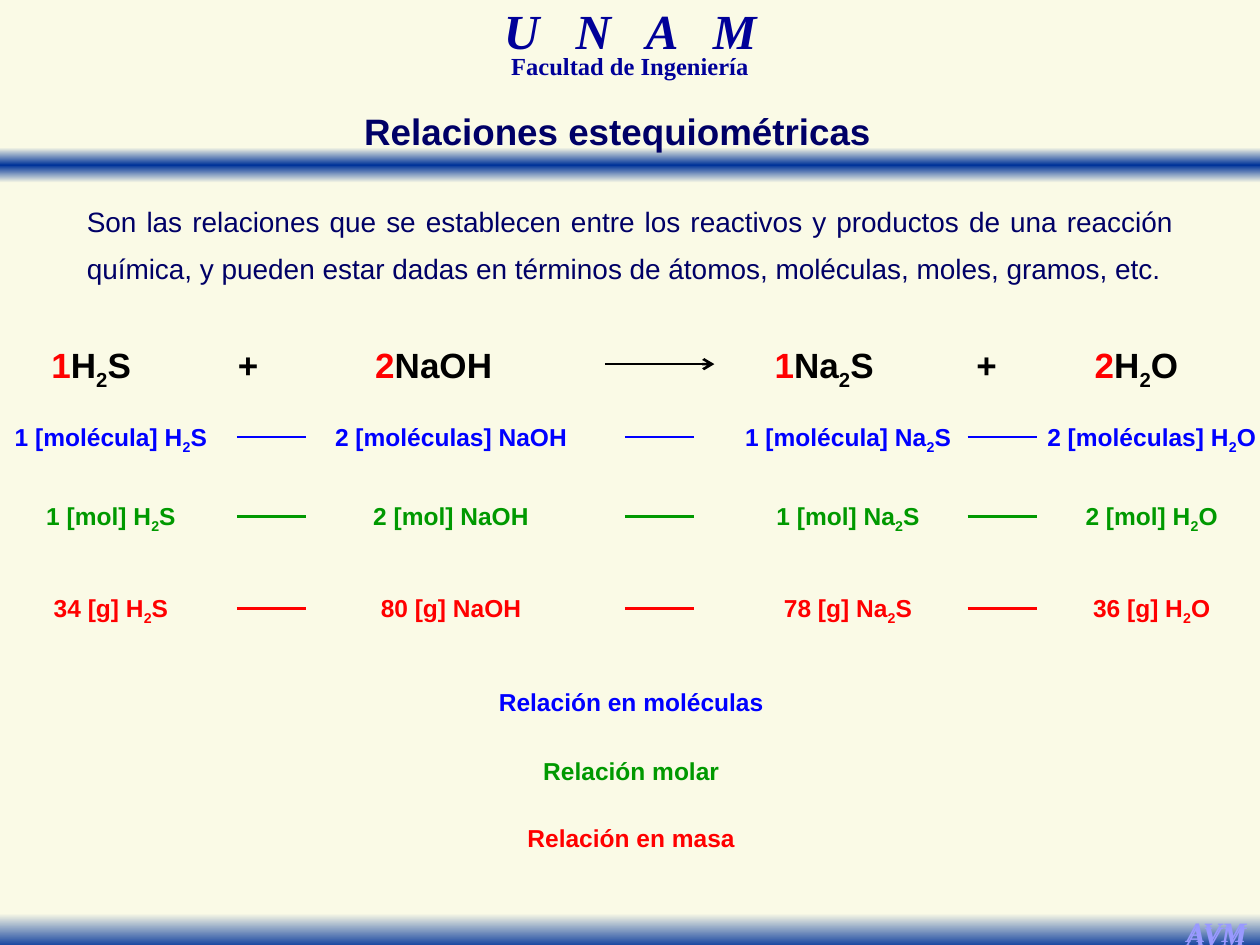
from dataclasses import dataclass

from lxml.etree import SubElement
from pptx import Presentation
from pptx.dml.color import RGBColor
from pptx.enum.shapes import MSO_CONNECTOR as Connector, MSO_SHAPE as Shape
from pptx.enum.text import MSO_ANCHOR as Anchor, MSO_AUTO_SIZE as AutoSize, PP_ALIGN as Align
from pptx.oxml.ns import qn
from pptx.util import Inches, Pt


@dataclass(frozen=True)
class Theme:
    """Colours, fonts and sizes of the slide."""
    cream: str = "FAFAE6"
    bar: str = "003399"
    header: str = "000099"
    navy: str = "000066"
    initials: str = "9999FF"
    black: str = "000000"
    blue: str = "0000FF"
    green: str = "009900"
    red: str = "FF0000"
    sans: str = "Arial"
    serif: str = "Times New Roman"
    banner_size: int = 28
    title_size: int = 21
    equation_size: int = 20
    body_size: int = 16
    label_size: int = 14
    line_width: float = 1.5


THEME = Theme()
ROW_HEIGHT = 0.34
LINK_LEFTS = (1.88, 4.96, 7.68)
LINK_LENGTH = 0.55
COLUMN_CENTERS = (0.88, 3.58, 6.73, 9.14)
TERMS = ("H_2S", "NaOH", "Na_2S", "H_2O")
ROWS = (
    (3.3, THEME.blue, ("1 [molécula]", "2 [moléculas]", "1 [molécula]", "2 [moléculas]"),
     (1.74, 2.05, 1.85, 1.87)),
    (3.93, THEME.green, ("1 [mol]", "2 [mol]", "1 [mol]", "2 [mol]"),
     (1.25, 1.44, 1.35, 1.27)),
    (4.66, THEME.red, ("34 [g]", "80 [g]", "78 [g]", "36 [g]"),
     (1.12, 1.32, 1.23, 1.15)),
)
LEGEND = (
    ("Relación en moléculas", THEME.blue, 5.4, 2.39),
    ("Relación molar", THEME.green, 5.95, 1.61),
    ("Relación en masa", THEME.red, 6.48, 1.86),
)
EQUATION = (
    ("1", "H_2S"), ("\t", "+"), ("\t2", "NaOH"),
    ("\t1", "Na_2S"), ("\t", "+"), ("\t2", "H_2O"),
)
EQUATION_TABS = (1.48, 2.57, 5.74, 7.34, 8.28)


def add_run(paragraph, text, size, color, name=THEME.sans, bold=True, italic=False):
    """Add one formatted run and return it."""
    run = paragraph.add_run()
    run.text = text
    run.font.size, run.font.name = Pt(size), name
    run.font.bold, run.font.italic = bold, italic
    run.font.color.rgb = RGBColor.from_string(color)
    return run


def add_formula(paragraph, formula, size, color):
    """Add a formula whose underscores mark one-digit subscripts."""
    first, *rest = formula.split("_")
    add_run(paragraph, first, size, color)
    for part in rest:
        subscript = add_run(paragraph, part[0], size, color)
        subscript.font._element.set("baseline", "-25000")
        add_run(paragraph, part[1:], size, color)


def add_box(slide, box, align=Align.CENTER, wrap=False):
    """Add an empty text box and return it with its first paragraph."""
    shape = slide.shapes.add_textbox(*map(Inches, box))
    shape.text_frame.word_wrap = wrap
    paragraph = shape.text_frame.paragraphs[0]
    paragraph.alignment = align
    return shape, paragraph


def add_line(slide, left, y, length, color, arrow=False):
    """Add a horizontal line, with an arrowhead if asked."""
    line = slide.shapes.add_connector(
        Connector.STRAIGHT, Inches(left), Inches(y), Inches(left + length), Inches(y))
    line.line.width = Pt(THEME.line_width)
    line.line.color.rgb = RGBColor.from_string(color)
    properties = line._element.spPr
    if arrow:
        SubElement(properties.find(qn("a:ln")), qn("a:tailEnd"), type="arrow")
    SubElement(properties, qn("a:effectLst"))


def add_bar(slide, box, stops):
    """Add a bar with a vertical gradient of (percent, colour) stops."""
    bar = slide.shapes.add_shape(Shape.RECTANGLE, *map(Inches, box))
    bar.shadow.inherit = False
    bar.line.fill.background()
    bar.fill.gradient()
    bar.fill.gradient_angle = 270
    stop_list = bar._element.spPr.find(".//" + qn("a:gsLst"))
    for stop in list(stop_list):
        stop_list.remove(stop)
    for percent, color in stops:
        stop = SubElement(stop_list, qn("a:gs"), pos=str(percent * 1000))
        SubElement(stop, qn("a:srgbClr"), val=color)


def add_header(slide, box):
    """Place the institution's name and faculty in the box."""
    left, top, width, height = box
    paragraph = add_box(slide, (left, top, width, 0.43), wrap=True)[1]
    paragraph.line_spacing = 0.7
    style = (THEME.banner_size, THEME.header, THEME.serif, True, True)
    spaced = add_run(paragraph, "U N A ", *style)
    spaced.font._element.set("spc", "700")
    add_run(paragraph, "M", *style)
    paragraph = add_box(slide, (left + 0.17, top + height - 0.26, width - 0.34, 0.26), wrap=True)[1]
    paragraph.line_spacing = 0.7
    add_run(paragraph, "Facultad de Ingeniería", THEME.label_size, THEME.header, THEME.serif)


def add_initials(slide, box):
    """Place the doubled initials in the bottom corner."""
    left, top, width, height = box
    for offset in (0, 0.03):
        paragraph = add_box(slide, (left, top + offset, width, height))[1]
        add_run(paragraph, "AVM", THEME.body_size, THEME.initials, THEME.serif, italic=True)


def set_title(slide, box):
    """Move, fill and format the title placeholder."""
    title = slide.shapes.title
    title.left, title.top, title.width, title.height = map(Inches, box)
    frame = title.text_frame
    frame.margin_left = frame.margin_right = 0
    frame.word_wrap, frame.auto_size = True, AutoSize.NONE
    frame.vertical_anchor = Anchor.TOP
    paragraph = frame.paragraphs[0]
    paragraph.alignment = Align.CENTER
    add_run(paragraph, "Relaciones estequiométricas", THEME.title_size, THEME.navy)
    title._element.getparent().append(title._element)


def add_definition(slide, box):
    """Place the justified definition."""
    paragraph = add_box(slide, box, Align.JUSTIFY, wrap=True)[1]
    paragraph.line_spacing = 1.4
    text = ("Son las relaciones que se establecen entre los reactivos y productos de una "
            "reacción química, y pueden estar dadas en términos de átomos, moléculas, "
            "moles, gramos, etc.")
    add_run(paragraph, text, THEME.body_size, THEME.navy, bold=False)


def add_equation(slide, box):
    """Place the balanced equation on tab stops, with its arrow."""
    shape, paragraph = add_box(slide, box, Align.LEFT, wrap=True)
    shape.fill.solid()
    shape.fill.fore_color.rgb = RGBColor.from_string(THEME.cream)
    tabs = SubElement(paragraph._p.get_or_add_pPr(), qn("a:tabLst"))
    for position in EQUATION_TABS:
        SubElement(tabs, qn("a:tab"), pos=str(Inches(position)), algn="l")
    for coefficient, formula in EQUATION:
        add_run(paragraph, coefficient, THEME.equation_size, THEME.red)
        add_formula(paragraph, formula, THEME.equation_size, THEME.black)
    left, top = box[:2]
    add_line(slide, left + 4.49, top + 0.21, 0.87, THEME.black, arrow=True)


def add_relation_row(slide, top, color, amounts, widths):
    """Place one row of linked amounts."""
    for center, width, amount, term in zip(COLUMN_CENTERS, widths, amounts, TERMS):
        paragraph = add_box(slide, (center - width / 2, top, width, ROW_HEIGHT))[1]
        add_formula(paragraph, f"{amount} {term}", THEME.label_size, color)
    for left in LINK_LEFTS:
        add_line(slide, left, top + ROW_HEIGHT / 2, LINK_LENGTH, color)


def add_legend(slide, center):
    """Place the names of the three relations around a centre line."""
    for text, color, top, width in LEGEND:
        paragraph = add_box(slide, (center - width / 2, top, width, ROW_HEIGHT))[1]
        add_run(paragraph, text, THEME.label_size, color)


def main():
    """Build and save the slide."""
    presentation = Presentation()
    presentation.slide_width, presentation.slide_height = Inches(10), Inches(7.5)
    slide = presentation.slides.add_slide(presentation.slide_layouts[5])
    slide.background.fill.solid()
    slide.background.fill.fore_color.rgb = RGBColor.from_string(THEME.cream)
    add_bar(slide, (0, 1.17, 10, 0.28), ((0, THEME.cream), (50, THEME.bar), (100, THEME.cream)))
    add_header(slide, (3.04, 0.08, 3.92, 0.6))
    add_bar(slide, (0, 7.25, 10, 0.28), ((0, THEME.cream), (100, THEME.bar)))
    add_initials(slide, (9.31, 7.21, 0.69, 0.37))
    add_definition(slide, (0.59, 1.47, 8.82, 0.81))
    set_title(slide, (2.69, 0.81, 4.42, 0.45))
    add_equation(slide, (0.31, 2.68, 9.36, 0.44))
    for row in ROWS:
        add_relation_row(slide, *row)
    add_legend(slide, 5.01)
    presentation.save("out.pptx")


if __name__ == "__main__":
    main()
